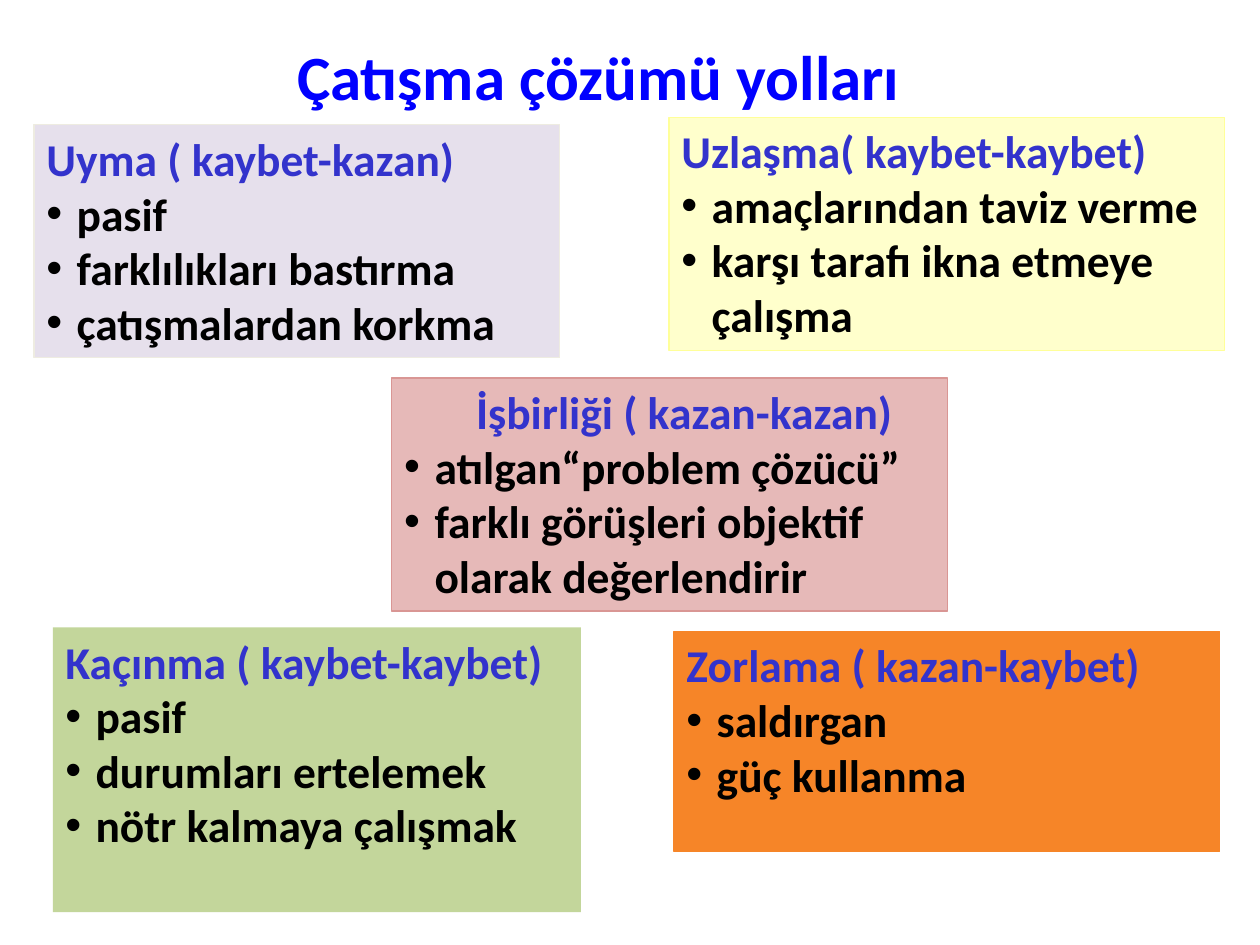
from pptx import Presentation
from pptx.dml.color import RGBColor
from pptx.enum.shapes import MSO_SHAPE
from pptx.enum.text import MSO_ANCHOR, MSO_AUTO_SIZE, PP_ALIGN
from pptx.oxml.ns import qn
from pptx.util import Inches, Pt
from lxml.etree import SubElement

FONT = "Calibri"
COLORS = {
    "title": "0000FF",
    "heading": "3333CC",
    "body": "000000",
    "lilac": "E6E0EC",
    "lilac_line": "EEECE1",
    "green": "C3D69B",
    "orange": "F68528",
    "pink": "E6B9B8",
    "pink_line": "D99694",
    "yellow": "FFFFCC",
    "yellow_line": "FFFF99",
}
HANGING = 0.24

# Position, fill, line, heading indent, heading, bullets
STRATEGIES = [
    ((0.27, 0.99, 4.17, 1.85), "lilac", "lilac_line", 0, "Uyma ( kaybet-kazan)",
     ["pasif", "farklılıkları bastırma", "çatışmalardan korkma"]),
    ((0.42, 4.98, 4.19, 2.26), "green", None, 0, "Kaçınma ( kaybet-kaybet)",
     ["pasif", "durumları ertelemek", "nötr kalmaya çalışmak"]),
    ((5.35, 5.01, 4.33, 1.75), "orange", "orange", 0, "Zorlama ( kazan-kaybet)",
     ["saldırgan", "güç kullanma"]),
    ((3.11, 3, 4.41, 1.85), "pink", "pink_line", 0.57, "İşbirliği ( kazan-kazan)",
     ["atılgan“problem çözücü”", "farklı görüşleri objektif olarak değerlendirir"]),
    ((5.31, 0.93, 4.41, 1.85), "yellow", "yellow_line", 0, "Uzlaşma( kaybet-kaybet)",
     ["amaçlarından taviz verme", "karşı tarafı ikna etmeye çalışma"]),
]


def rgb(name):
    return RGBColor.from_string(COLORS[name])


def format_runs(paragraph, size, color):
    for run in paragraph.runs:
        run.font.name = FONT
        run.font.size = Pt(size)
        run.font.bold = True
        run.font.color.rgb = rgb(color)


def set_indent(paragraph, left, first=0):
    properties = paragraph._p.get_or_add_pPr()
    properties.set("marL", str(Inches(left)))
    properties.set("indent", str(Inches(first)))
    return properties


def add_bullet(paragraph):
    properties = set_indent(paragraph, HANGING, -HANGING)
    SubElement(properties, qn("a:buFont")).set("typeface", "Arial")
    SubElement(properties, qn("a:buChar")).set("char", "•")


def set_title(slide, text):
    title = slide.shapes.title
    title.left, title.top = Inches(0), Inches(0.32)
    title.width, title.height = Inches(9.5), Inches(0.55)
    frame = title.text_frame
    frame.text = text
    frame.auto_size = MSO_AUTO_SIZE.NONE
    frame.vertical_anchor = MSO_ANCHOR.MIDDLE
    frame.paragraphs[0].alignment = PP_ALIGN.CENTER
    format_runs(frame.paragraphs[0], 36, "title")


def add_strategy(slide, place, fill, line, heading_indent, heading, bullets):
    shape = slide.shapes.add_shape(MSO_SHAPE.RECTANGLE, *map(Inches, place))
    shape.shadow.inherit = False
    shape.fill.solid()
    shape.fill.fore_color.rgb = rgb(fill)
    if line:
        shape.line.color.rgb = rgb(line)
        shape.line.width = Pt(0.75)
    else:
        shape.line.fill.background()

    frame = shape.text_frame
    frame.word_wrap = True
    frame.vertical_anchor = MSO_ANCHOR.TOP
    frame.text = "\n".join([heading, *bullets])
    for index, paragraph in enumerate(frame.paragraphs):
        paragraph.alignment = PP_ALIGN.LEFT
        if index == 0:
            set_indent(paragraph, heading_indent)
        else:
            add_bullet(paragraph)
        format_runs(paragraph, 26, "body" if index else "heading")


def main():
    presentation = Presentation()
    presentation.slide_width = Inches(10)
    presentation.slide_height = Inches(7.5)
    slide = presentation.slides.add_slide(presentation.slide_layouts[5])

    set_title(slide, "Çatışma çözümü yolları")
    # Conflict resolution strategies
    for strategy in STRATEGIES:
        add_strategy(slide, *strategy)

    presentation.save("out.pptx")


if __name__ == "__main__":
    main()
